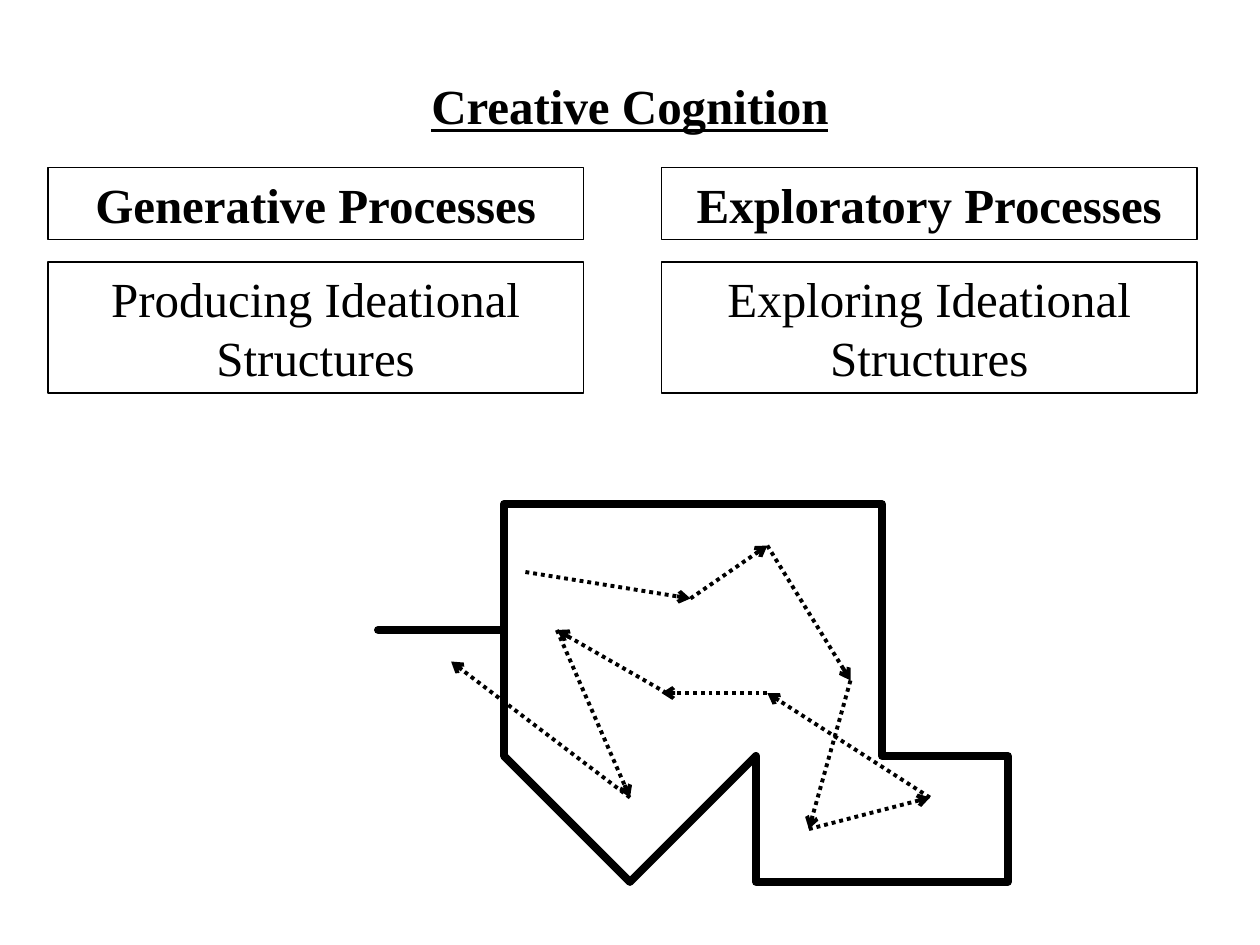
from itertools import pairwise

from lxml import etree
from pptx import Presentation
from pptx.dml.color import RGBColor
from pptx.enum.dml import MSO_LINE
from pptx.enum.shapes import MSO_CONNECTOR, MSO_SHAPE
from pptx.enum.text import MSO_ANCHOR, PP_ALIGN
from pptx.oxml.ns import qn
from pptx.util import Inches, Pt

RECTANGLE = MSO_SHAPE.RECTANGLE
STRAIGHT = MSO_CONNECTOR.STRAIGHT
DOTTED = MSO_LINE.ROUND_DOT
MIDDLE = MSO_ANCHOR.MIDDLE
CENTER = PP_ALIGN.CENTER
TITLE_ONLY = 5


def color(hex_code):
    return RGBColor.from_string(hex_code)


def write(shape, text, bold=False, underline=False):
    frame = shape.text_frame
    frame.word_wrap = True
    frame.vertical_anchor = MIDDLE
    frame.text = text
    paragraph = frame.paragraphs[0]
    paragraph.alignment = CENTER
    font = paragraph.runs[0].font
    font.name, font.size = "Times New Roman", Pt(28)
    font.bold, font.underline = bold, underline
    font.color.rgb = color("000000")


prs = Presentation()
prs.slide_width, prs.slide_height = Inches(10), Inches(7.5)
slide = prs.slides.add_slide(prs.slide_layouts[TITLE_ONLY])
shapes = slide.shapes

heading = shapes.title
heading.left, heading.top = Inches(0.5), Inches(0.5)
heading.width, heading.height = Inches(9), Inches(0.67)
write(heading, "Creative Cognition", bold=True, underline=True)

# Two columns of processes: a bold name above its description
columns = [0.38, 5.25]
column_width = 4.25
rows = [
    (1.33, 0.57, True, ["Generative Processes", "Exploratory Processes"]),
    (2.08, 1.04, False, ["Producing Ideational Structures",
                         "Exploring Ideational Structures"]),
]
for top, height, bold, labels in rows:
    for left, label in zip(columns, labels):
        process = shapes.add_shape(RECTANGLE, Inches(left), Inches(top),
                                   Inches(column_width), Inches(height))
        process.shadow.inherit = False
        process.fill.background()
        process.line.color.rgb = color("000000")
        process.line.width = Pt(0.75)
        write(process, label, bold=bold)

# Irregular border of the idea space, clockwise from its upper left
border = [
    (4.09, 3.98), (4.23, 4.18), (4.35, 4.35), (4.64, 4.45), (4.84, 4.43),
    (4.91, 4.27), (5.2, 4.24), (5.42, 4.29), (5.73, 4.27), (5.89, 4.12),
    (6.26, 3.97), (6.44, 4.09), (6.91, 4.21), (7.17, 4.3), (7.23, 4.52),
    (7.24, 4.74), (7.35, 4.92), (7.26, 5.11), (6.95, 5.3), (6.89, 5.44),
    (6.98, 5.63), (7.08, 5.71), (7.01, 5.84), (7.09, 6.01), (7.7, 6.03),
    (7.69, 6.45), (7.74, 6.76), (7.52, 6.82), (7.2, 6.79), (6.36, 6.8),
    (6.27, 6.76), (6.23, 6.58), (6.28, 6.19), (6.42, 6.03), (6.11, 5.71),
    (5.97, 5.73), (5.79, 5.88), (5.82, 6.18), (5.8, 6.41), (5.58, 6.5),
    (5.26, 6.61), (5.06, 6.7), (4.8, 6.65), (4.65, 6.52), (4.18, 6.33),
    (4.03, 6.32), (3.95, 6.14), (3.76, 5.85), (3.67, 5.62), (3.56, 5.48),
    (3.3, 5.32), (3.09, 5.26), (3.05, 5.17), (3.08, 4.92), (3.13, 4.81),
    (3.33, 4.74), (3.47, 4.76), (3.62, 4.89), (3.85, 4.71), (3.88, 4.67),
    (3.8, 4.52), (3.94, 4.45), (4, 4.36), (3.97, 4.1), (4.06, 4),
    (4.15, 4.05),
]
builder = shapes.build_freeform(*border[0], scale=Inches(1))
builder.add_line_segments(border[1:], close=False)
idea_space = builder.convert_to_shape()
idea_space.shadow.inherit = False
idea_space.fill.background()
idea_space.line.color.rgb = color("000000")
idea_space.line.width = Pt(4.5)
etree.SubElement(idea_space.line._get_or_add_ln(), qn("a:round"))

# Wandering path of exploration through the idea space
routes = [
    [(4.17, 4.54), (5.48, 4.75), (6.09, 4.33), (6.75, 5.4), (6.42, 6.58),
     (7.38, 6.33), (6.09, 5.5), (5.25, 5.5)],
    [(5.29, 5.5), (4.42, 5), (5, 6.33), (3.58, 5.25)],
]
for route in routes:
    for start, end in pairwise(route):
        step = shapes.add_connector(STRAIGHT, *map(Inches, start + end))
        step.line.color.rgb = color("000000")
        step.line.width = Pt(2.25)
        step.line.dash_style = DOTTED
        etree.SubElement(step.line._get_or_add_ln(), qn("a:tailEnd"), type="arrow")
        etree.SubElement(step._element.spPr, qn("a:effectLst"))

prs.save("out.pptx")
